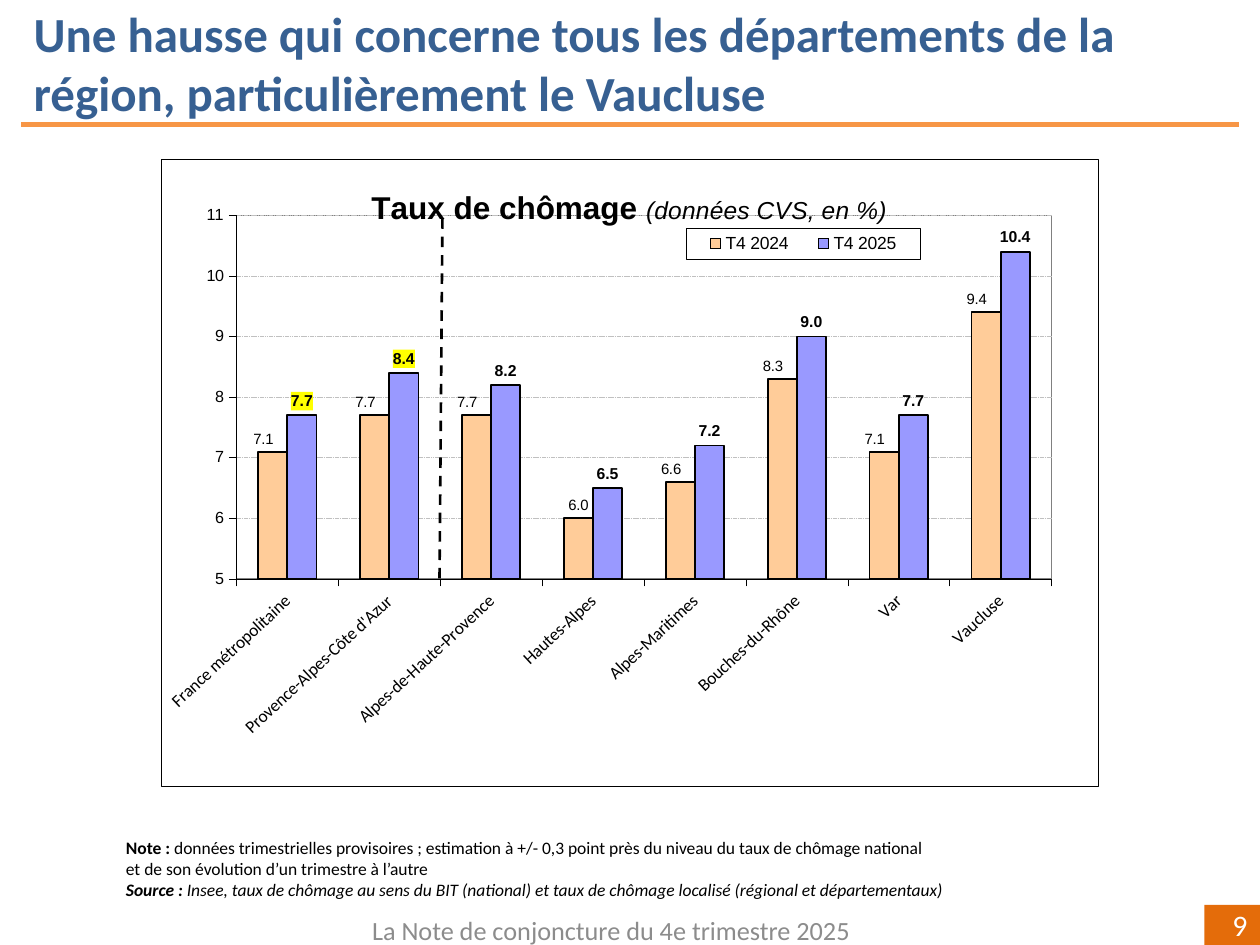
from dataclasses import dataclass, field

from lxml import etree
from pptx import Presentation
from pptx.chart.data import CategoryChartData
from pptx.dml.color import RGBColor
from pptx.enum.chart import XL_CHART_TYPE, XL_LABEL_POSITION, XL_LEGEND_POSITION, XL_TICK_MARK
from pptx.enum.dml import MSO_LINE
from pptx.enum.shapes import MSO_CONNECTOR, MSO_SHAPE
from pptx.enum.text import MSO_ANCHOR, PP_ALIGN
from pptx.oxml import parse_xml
from pptx.oxml.ns import qn
from pptx.util import Cm, Pt

COLUMN = XL_CHART_TYPE.COLUMN_CLUSTERED
OUTER = XL_LABEL_POSITION.OUTSIDE_END
RIGHT_KEY = XL_LEGEND_POSITION.RIGHT
TICK_OUT, TICK_NONE = XL_TICK_MARK.OUTSIDE, XL_TICK_MARK.NONE
DASH, DOTS = MSO_LINE.DASH, MSO_LINE.SQUARE_DOT
STRAIGHT, RECT = MSO_CONNECTOR.STRAIGHT, MSO_SHAPE.RECTANGLE
TOP, MIDDLE = MSO_ANCHOR.TOP, MSO_ANCHOR.MIDDLE
LEFT, CENTER, RIGHT = PP_ALIGN.LEFT, PP_ALIGN.CENTER, PP_ALIGN.RIGHT

HUES = {
    "blue": "376092", "orange": "F79646", "rust": "E46C0A", "white": "FFFFFF",
    "grey": "8C8C8C", "black": "000000", "grid": "C0C0C0", "edge": "808080",
    "peach": "FFCC99", "lilac": "9999FF", "yellow": "FFFF00",
}
SPACES = (
    'xmlns:c="http://schemas.openxmlformats.org/drawingml/2006/chart" '
    'xmlns:a="http://schemas.openxmlformats.org/drawingml/2006/main"'
)
PLACES = [
    "France métropolitaine", "Provence-Alpes-Côte d'Azur", "Alpes-de-Haute-Provence",
    "Hautes-Alpes", "Alpes-Maritimes", "Bouches-du-Rhône", "Var", "Vaucluse",
]


@dataclass
class Run:
    text: str
    style: dict


@dataclass
class Block:
    area: tuple
    lines: list
    align: int = LEFT
    anchor: int = TOP
    fill: str = ""
    inset: tuple = (0.25, 0.13, 0.25, 0.13)


@dataclass
class Rule:
    start: tuple
    end: tuple
    hue: str
    width: float
    dash: int | None = None


@dataclass
class Series:
    name: str
    rates: list
    hue: str
    style: dict
    moved: list = field(default_factory=list)
    marked: list = field(default_factory=list)


def look(size: float, hue: str = "black", name: str = "Calibri", **more) -> dict:
    return {"size": Pt(size), "name": name, "color": hue, **more}


NOTE = look(10, bold=False)
HEAD = look(10, bold=True)
BLOCKS = [
    Block((0.43, -0.05, 24.97, 2.64), [[Run(
        "Une hausse qui concerne tous les départements de la région, particulièrement le Vaucluse",
        look(28, "blue", bold=True))]]),
    Block((24.28, 18.24, 1.12, 0.81), [[Run("9", look(17, "white"))]], RIGHT, MIDDLE, "rust"),
    Block((6.12, 18.24, 12.4, 1.02),
          [[Run("La Note de conjoncture du 4e trimestre 2025", look(15, "grey"))]], CENTER, MIDDLE),
    Block((2.49, 16.79, 17.35, 1.35), [
        [Run("Note : ", HEAD), Run(
            "données trimestrielles provisoires ; estimation à +/- 0,3 point près "
            "du niveau du taux de chômage national", NOTE)],
        [Run("et de son évolution d’un trimestre à l’autre", NOTE)],
        [Run("Source : ", {**HEAD, "italic": True}), Run(
            "Insee, taux de chômage au sens du BIT (national) et taux de chômage "
            "localisé (régional et départementaux)", {**NOTE, "italic": True})],
    ], inset=(0.05, 0.08, 0, 0)),
]
TITLE = [
    Run("Taux de chômage ", look(18, name="Arial", bold=True)),
    Run("(données CVS, en %)", look(14, name="Arial", bold=False, italic=True)),
]
SERIES = [
    Series("T4 2024", [7.1, 7.7, 7.7, 6, 6.6, 8.3, 7.1, 9.4], "peach",
           look(8.5, name="Arial", bold=False), moved=[0, 1, 2, 4, 5, 6, 7]),
    Series("T4 2025", [7.7, 8.4, 8.2, 6.5, 7.2, 9, 7.7, 10.4], "lilac",
           look(9, name="Arial", bold=True), marked=[0, 1]),
]
BAR = Rule((0.43, 2.51), (24.97, 2.51), "orange", 3)
SPLIT = Rule((8.86, 11.66), (8.92, 4.29), "black", 1.5, DASH)


def tint(hue: str) -> RGBColor:
    return RGBColor.from_string(HUES[hue])


def style(font, values: dict) -> None:
    for key, value in values.items():
        if key == "color":
            font.color.rgb = tint(value)
        else:
            setattr(font, key, value)


def fill(part, hue: str) -> None:
    part.fill.solid()
    part.fill.fore_color.rgb = tint(hue)


def stroke(line, hue: str, width: float, dash: int | None = None) -> None:
    line.color.rgb = tint(hue)
    line.width = Pt(width)
    if dash is not None:
        line.dash_style = dash


def write(para, runs: list) -> None:
    for item in runs:
        run = para.add_run()
        run.text = item.text
        style(run.font, item.style)


def draw_block(slide, block: Block) -> None:
    area = [Cm(n) for n in block.area]
    if block.fill:
        shape = slide.shapes.add_shape(RECT, *area)
        shape.shadow.inherit = False
        fill(shape, block.fill)
        shape.line.fill.background()
    else:
        shape = slide.shapes.add_textbox(*area)
    frame = shape.text_frame
    frame.word_wrap = True
    frame.vertical_anchor = block.anchor
    for side, gap in zip(("left", "top", "right", "bottom"), block.inset):
        setattr(frame, f"margin_{side}", Cm(gap))
    for spot, runs in enumerate(block.lines):
        para = frame.add_paragraph() if spot else frame.paragraphs[0]
        para.alignment = block.align
        write(para, runs)


def draw_rule(slide, rule: Rule) -> None:
    line = slide.shapes.add_connector(STRAIGHT, *[Cm(n) for n in rule.start + rule.end])
    stroke(line.line, rule.hue, rule.width, rule.dash)
    etree.SubElement(line._element.spPr, qn("a:effectLst"))


def place(node, spot: int, inner: bool = False, **sizes: float) -> None:
    for old in node.findall(qn("c:layout")):
        node.remove(old)
    target = '<c:layoutTarget val="inner"/>' if inner else ""
    modes = "" if node.tag == qn("c:dLbl") else '<c:xMode val="edge"/><c:yMode val="edge"/>'
    parts = "".join(f'<c:{key} val="{value}"/>' for key, value in sizes.items())
    node.insert(spot, parse_xml(
        f"<c:layout {SPACES}><c:manualLayout>{target}{modes}{parts}</c:manualLayout></c:layout>"))


def panel(hue: str, edge: str = "", width: float = 0.25):
    line = (f'<a:ln w="{Pt(width)}"><a:solidFill><a:srgbClr val="{HUES[edge]}"/></a:solidFill></a:ln>'
            if edge else "")
    return parse_xml(f'<c:spPr {SPACES}><a:solidFill><a:srgbClr val="{HUES[hue]}"/></a:solidFill>'
                     f"{line}</c:spPr>")


def draw_series(part, series: Series) -> None:
    fill(part.format, series.hue)
    stroke(part.format.line, "black", 1)
    part.invert_if_negative = False
    labels = part.data_labels
    for key, value in {"show_value": True, "number_format": "0.0",
                       "number_format_is_linked": False, "position": OUTER}.items():
        setattr(labels, key, value)
    style(labels.font, series.style)
    for spot in series.moved + series.marked:
        label = part.points[spot].data_label
        style(label.font, series.style)
        label.position = OUTER
        node = labels._element.findall(qn("c:dLbl"))[-1]
        if spot in series.marked:
            node.find(qn("c:txPr")).addprevious(panel("yellow"))
        else:
            place(node, 1, x=-0.01, y=0)


def draw_chart(slide) -> None:
    data = CategoryChartData(number_format="0.0")
    data.categories = PLACES
    for series in SERIES:
        data.add_series(series.name, series.rates)
    area = [Cm(n) for n in (3.25, 3.2, 18.9, 12.65)]
    chart = slide.shapes.add_chart(COLUMN, *area, data).chart
    style(chart.font, look(8.5, name="Arial"))
    root = chart._chartSpace.chart
    root.addnext(panel("white", "black"))
    write(chart.chart_title.text_frame.paragraphs[0], TITLE)
    chart.chart_title.include_in_layout = True
    place(chart.chart_title._element, 1, x=0.22, y=0.04)
    plot = chart.plots[0]
    for key, value in {"gap_width": 150, "overlap": 0, "vary_by_categories": False}.items():
        setattr(plot, key, value)
    for part, series in zip(plot.series, SERIES):
        draw_series(part, series)
    rates, names = chart.value_axis, chart.category_axis
    for axis, font in ((rates, look(9.2, name="Arial")), (names, look(10))):
        axis.major_tick_mark, axis.minor_tick_mark = TICK_OUT, TICK_NONE
        style(axis.tick_labels.font, font)
        stroke(axis.format.line, "black", 0.25)
    names._element.find(qn("c:txPr")).find(qn("a:bodyPr")).set("rot", str(-43 * 60000))
    for key, value in {"minimum_scale": 5, "maximum_scale": 11, "major_unit": 1}.items():
        setattr(rates, key, value)
    rates.tick_labels.number_format = "0"
    rates.tick_labels.number_format_is_linked = False
    stroke(rates.major_gridlines.format.line, "grid", 0.25, DOTS)
    chart.has_legend = True
    legend = chart.legend
    legend.position = RIGHT_KEY
    legend.include_in_layout = False
    style(legend.font, look(10, name="Arial"))
    place(legend._element, 1, x=0.56, y=0.11, w=0.25, h=0.05)
    legend._element.find(qn("c:txPr")).addprevious(panel("white", "black"))
    field_area = root.plotArea
    place(field_area, 0, True, x=0.08, y=0.09, w=0.87, h=0.58)
    field_area.append(panel("white", "edge", 1))


def main() -> None:
    """Build the slide on jobless rates by area."""
    deck = Presentation()
    deck.slide_width, deck.slide_height = Cm(25.4), Cm(19.05)
    slide = deck.slides.add_slide(deck.slide_layouts[6])
    for block in BLOCKS:
        draw_block(slide, block)
    draw_rule(slide, BAR)
    draw_chart(slide)
    draw_rule(slide, SPLIT)
    deck.save("out.pptx")


if __name__ == "__main__":
    main()
